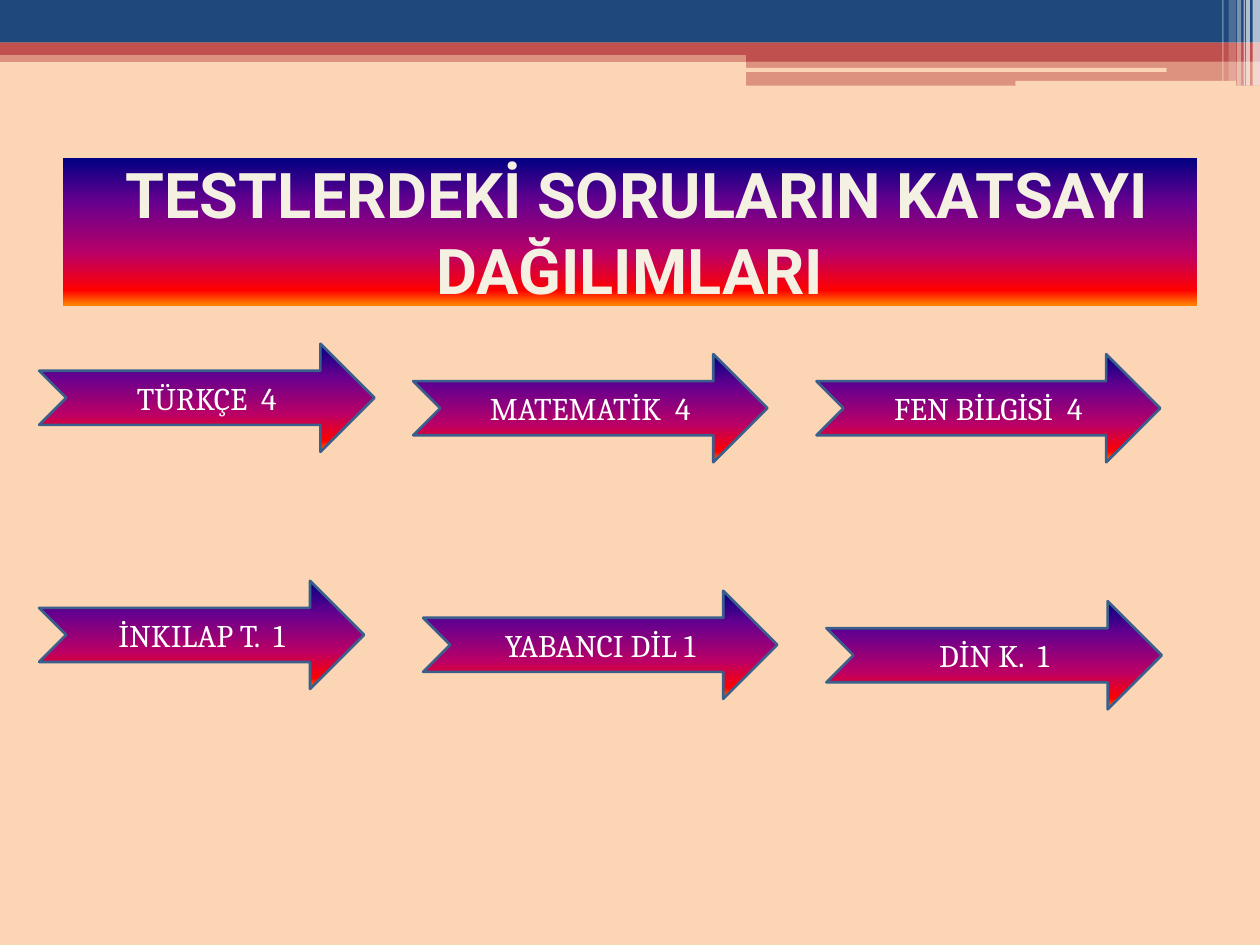
from lxml import etree
from pptx import Presentation
from pptx.dml.color import RGBColor
from pptx.enum.shapes import MSO_SHAPE
from pptx.enum.text import MSO_ANCHOR, MSO_AUTO_SIZE, PP_ALIGN
from pptx.oxml.ns import qn
from pptx.util import Cm, Pt

RECTANGLE = MSO_SHAPE.RECTANGLE
ROUNDED = MSO_SHAPE.ROUNDED_RECTANGLE
ARROW = MSO_SHAPE.NOTCHED_RIGHT_ARROW
MIDDLE = MSO_ANCHOR.MIDDLE
CENTER = PP_ALIGN.CENTER
NO_AUTOFIT = MSO_AUTO_SIZE.NONE

PEACH = RGBColor(0xFC, 0xD5, 0xB5)
NAVY = RGBColor(0x1F, 0x49, 0x7D)
BRICK = RGBColor(0xC0, 0x50, 0x4D)
WHITE = RGBColor(0xFF, 0xFF, 0xFF)
CREAM = RGBColor(0xF4, 0xF1, 0xE3)
STEEL = RGBColor(0x3A, 0x5F, 0x8C)
TITLE_OUTLINE = RGBColor(0x05, 0x46, 0x97)
SUNSET = [
    (0, RGBColor(0x00, 0x00, 0x82)),
    (30, RGBColor(0x66, 0x00, 0x8F)),
    (65, RGBColor(0xBA, 0x00, 0x66)),
    (90, RGBColor(0xFF, 0x00, 0x00)),
    (100, RGBColor(0xFF, 0x82, 0x00)),
]


def fill_sunset(shape):
    shape.fill.gradient()
    shape.fill.gradient_angle = 270
    stops = shape._element.spPr.find(qn("a:gradFill")).find(qn("a:gsLst"))
    for stop in list(stops):
        stops.remove(stop)
    for position, color in SUNSET:
        stop = etree.SubElement(stops, qn("a:gs"), pos=str(position * 1000))
        etree.SubElement(stop, qn("a:srgbClr"), val=str(color))


def add_centered_run(shape, text, font_name, size, color):
    frame = shape.text_frame
    frame.word_wrap = True
    frame.auto_size = NO_AUTOFIT
    frame.vertical_anchor = MIDDLE
    paragraph = frame.paragraphs[0]
    paragraph.alignment = CENTER
    run = paragraph.add_run()
    run.text = text
    run.font.name = font_name
    run.font.size = Pt(size)
    run.font.color.rgb = color
    return run


presentation = Presentation()
presentation.slide_width = Cm(25.4)
presentation.slide_height = Cm(19.05)
slide = presentation.slides.add_slide(presentation.slide_layouts[5])
slide.background.fill.solid()
slide.background.fill.fore_color.rgb = PEACH

header_bars = [
    (RECTANGLE, 0, 1.02, 25.4, 0.23, BRICK, 50),
    (RECTANGLE, 0, 0, 25.4, 0.86, NAVY, 100),
    (RECTANGLE, 0, 0.86, 25.4, 0.25, BRICK, 100),
    (RECTANGLE, 15.04, 0.99, 10.36, 0.25, BRICK, 100),
    (RECTANGLE, 15.04, 1.22, 10.36, 0.51, BRICK, 50),
    (ROUNDED, 15.01, 1.37, 8.51, 0.08, PEACH, 100),
    (ROUNDED, 20.47, 1.63, 4.45, 0.1, PEACH, 100),
    (RECTANGLE, 25.25, 0, 0.15, 1.73, WHITE, 65),
    (RECTANGLE, 25.12, 0, 0.08, 1.73, WHITE, 65),
    (RECTANGLE, 25.07, 0, 0.03, 1.73, WHITE, 60),
    (RECTANGLE, 24.94, 0, 0.08, 1.73, WHITE, 40),
    (RECTANGLE, 24.77, 0, 0.15, 1.63, WHITE, 20),
    (RECTANGLE, 24.64, 0, 0.03, 1.63, WHITE, 30),
]
for kind, left, top, width, height, color, opacity in header_bars:
    bar = slide.shapes.add_shape(kind, Cm(left), Cm(top), Cm(width), Cm(height))
    bar.shadow.inherit = False
    bar.line.fill.background()
    bar.fill.solid()
    bar.fill.fore_color.rgb = color
    if opacity < 100:
        color_element = bar._element.spPr.find(qn("a:solidFill"))[0]
        etree.SubElement(color_element, qn("a:alpha"), val=str(opacity * 1000))

title = slide.shapes.title
title.left, title.top = Cm(1.27), Cm(3.18)
title.width, title.height = Cm(22.86), Cm(2.97)
fill_sunset(title)
title_run = add_centered_run(
    title, " TESTLERDEKİ SORULARIN KATSAYI DAĞILIMLARI", "Roboto", 36, CREAM
)
title_run.font.bold = True
outline = etree.Element(qn("a:ln"), w=str(Pt(1)))
outline_fill = etree.SubElement(outline, qn("a:solidFill"))
etree.SubElement(outline_fill, qn("a:srgbClr"), val=str(TITLE_OUTLINE))
title_run._r.get_or_add_rPr().insert(0, outline)

subjects = [
    ("TÜRKÇE  4", 0.79, 6.93, 6.76),
    ("MATEMATİK  4", 8.33, 7.14, 7.14),
    ("FEN BİLGİSİ  4", 16.46, 7.14, 6.93),
    ("İNKILAP T.  1", 0.79, 11.71, 6.55),
    ("YABANCI DİL 1", 8.53, 11.91, 7.14),
    ("DİN K.  1", 16.66, 12.12, 6.76),
]
for text, left, top, width in subjects:
    arrow = slide.shapes.add_shape(ARROW, Cm(left), Cm(top), Cm(width), Cm(2.18))
    arrow.shadow.inherit = False
    fill_sunset(arrow)
    arrow.line.color.rgb = STEEL
    arrow.line.width = Pt(1.5)
    add_centered_run(arrow, text, "Cambria", 18, WHITE)

presentation.save("out.pptx")
